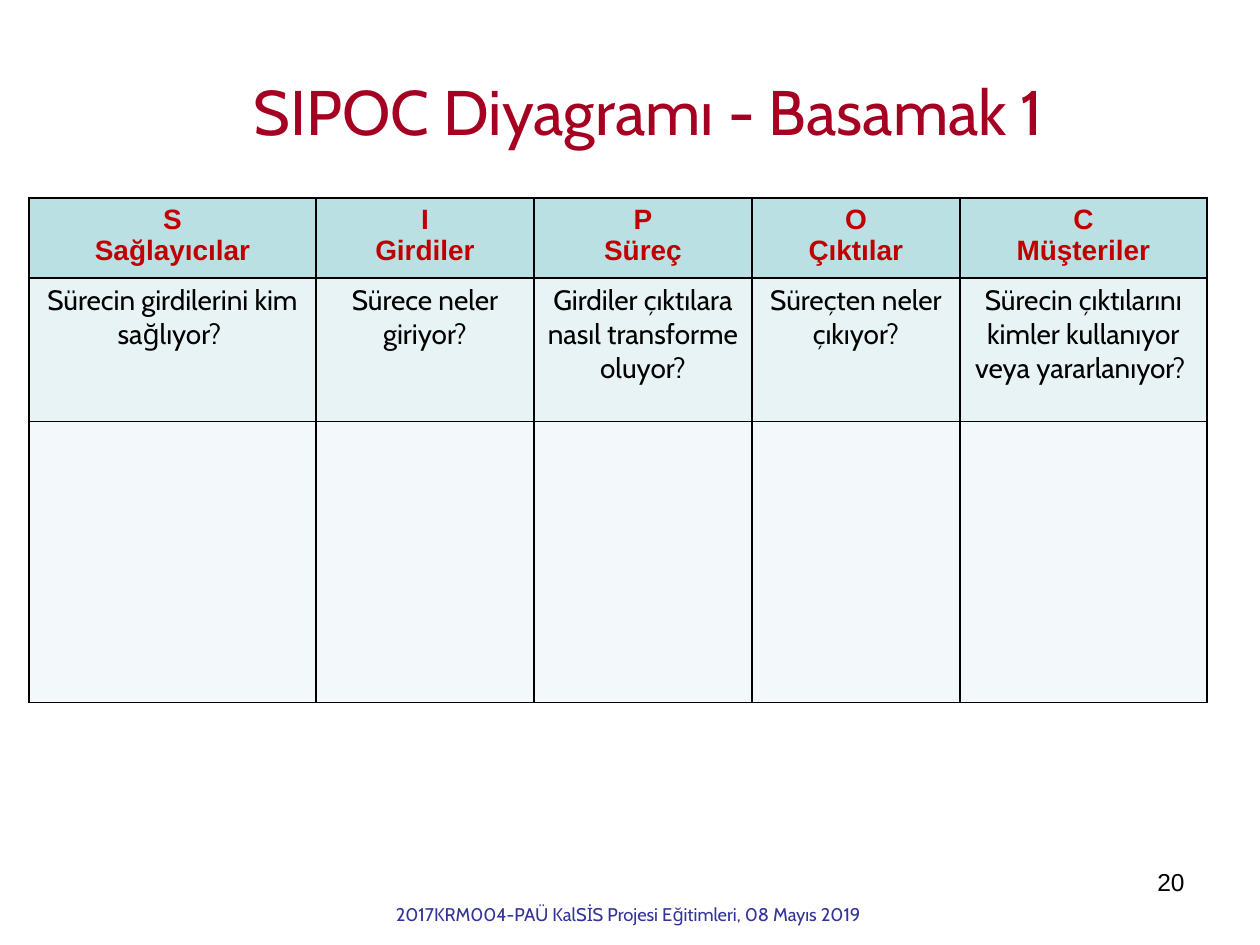
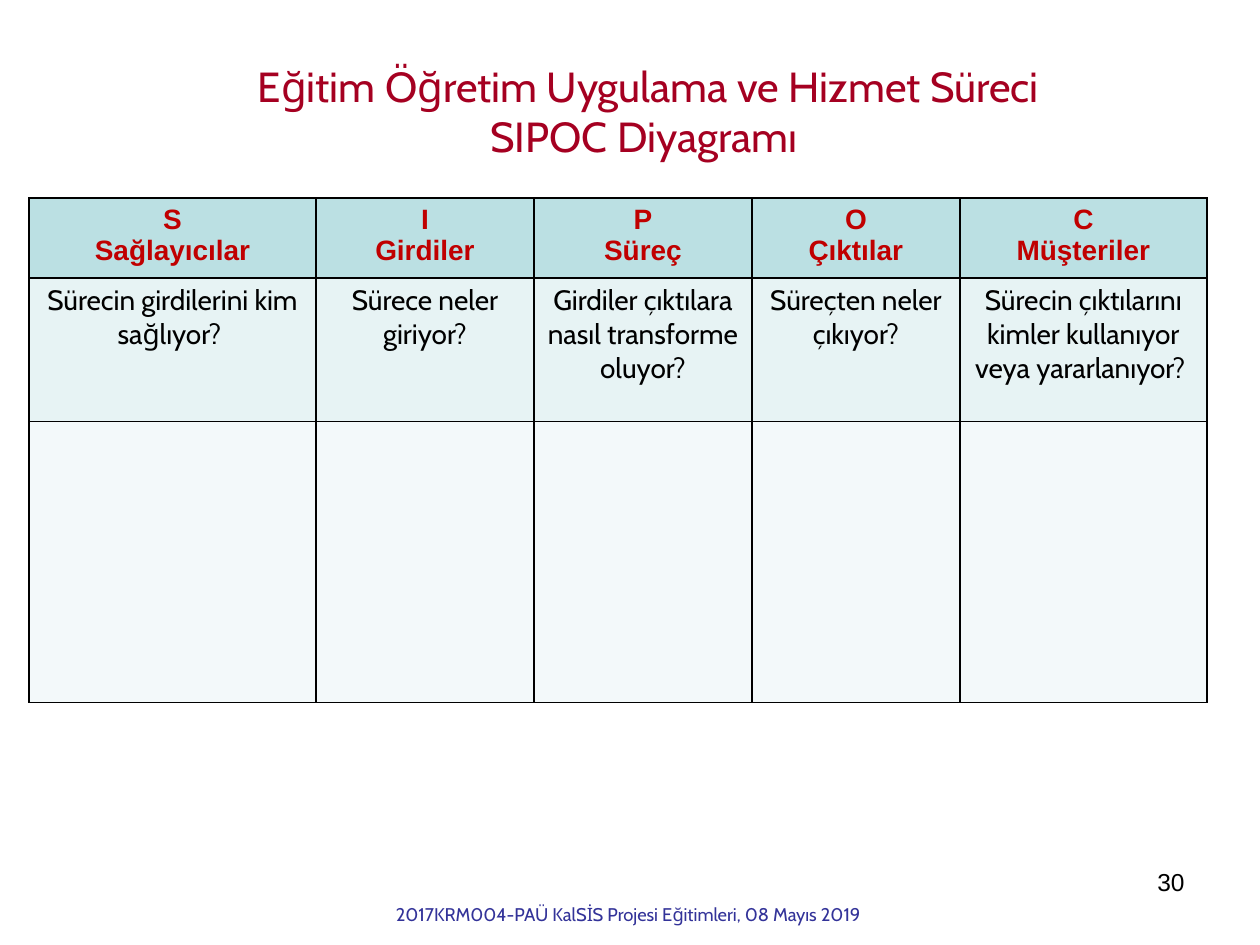
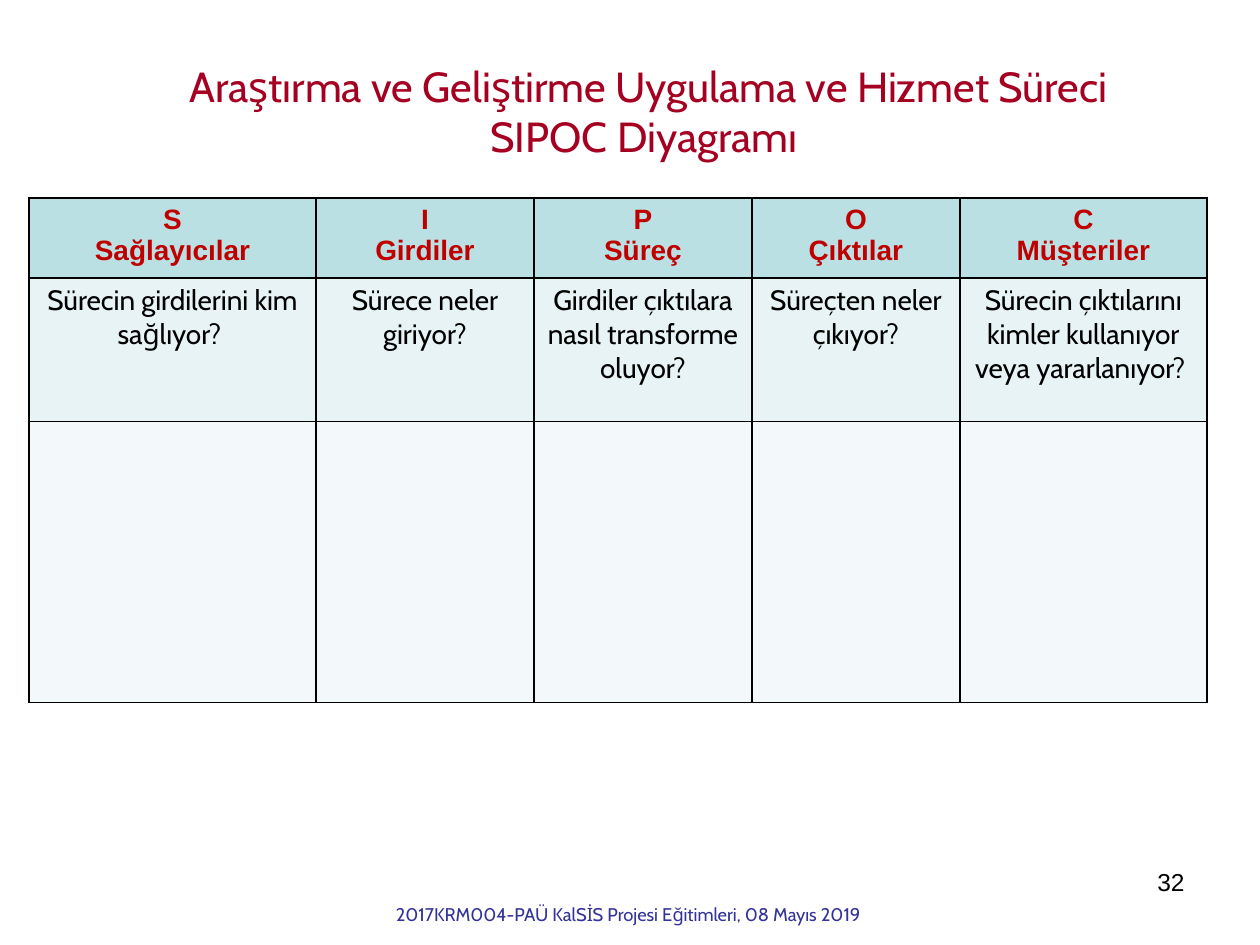
from lxml.etree import SubElement
from pptx import Presentation
from pptx.dml.color import RGBColor
from pptx.enum.text import MSO_ANCHOR as Anchor, MSO_AUTO_SIZE as AutoSize, PP_ALIGN as Align
from pptx.oxml.ns import qn
from pptx.util import Emu, Pt

PX = 914400 // 126
PAGE_SIZE = (1260, 945)
TITLE_ONLY = 5

CRIMSON = RGBColor(0xA5, 0x00, 0x21)
RED = RGBColor(0xC0, 0x00, 0x00)
BLACK = RGBColor(0x00, 0x00, 0x00)
NAVY = RGBColor(0x33, 0x33, 0x99)
AQUA = RGBColor(0xBB, 0xE0, 0xE3)
PALE_AQUA = RGBColor(0xE7, 0xF3, 0xF4)
MIST = RGBColor(0xF3, 0xF9, 0xFA)

TITLE_PLACE = (72, 66, 1153, 89)
NUMBER_PLACE = (903, 861, 294, 66)
FOOTER_PLACE = (362, 897, 537, 29)
TABLE_CORNER = (29, 198)
COLUMN_WIDTHS = (287, 218, 218, 208, 247)
ROW_HEIGHTS = (79, 144, 281)
ROW_FILLS = (AQUA, PALE_AQUA, MIST)
BORDER_WIDTH = Pt(1)

TITLE_FORMAT = {"name": "Cabin", "bold": False, "color": CRIMSON}
NUMBER_FORMAT = {"name": "Arial", "size": Pt(14), "color": BLACK}
FOOTER_FORMAT = {"name": "Cabin", "size": Pt(10.5), "color": NAVY}
HEADING_FORMAT = {"name": "Arial", "size": Pt(16), "bold": True, "color": RED}
QUESTION_FORMAT = {"name": "Cabin", "size": Pt(16), "bold": False, "color": BLACK}

FOOTER = "2017KRM004-PAÜ KalSİS Projesi Eğitimleri, 08 Mayıs 2019 "
SIPOC = (
    ("S", "Sağlayıcılar", "Sürecin girdilerini kim sağlıyor? "),
    ("I", "Girdiler", "Sürece neler giriyor?"),
    ("P", "Süreç", "Girdiler çıktılara nasıl transforme oluyor?"),
    ("O", "Çıktılar", "Süreçten neler çıkıyor?"),
    ("C", "Müşteriler", "Sürecin çıktılarını kimler kullanıyor veya yararlanıyor? "),
)
PAGES = (
    ("SIPOC Diyagramı - Basamak 1", 36, "20"),
    ("Eğitim Öğretim Uygulama ve Hizmet Süreci\vSIPOC Diyagramı ", 24, "30"),
    ("Araştırma ve Geliştirme Uygulama ve Hizmet Süreci\vSIPOC Diyagramı ", 24, "32"),
)


def scaled(lengths):
    return [Emu(length * PX) for length in lengths]


def write(frame, text, font_format, align=Align.CENTER):
    frame.text = text
    for para in frame.paragraphs:
        para.alignment = align
        for span in para.runs:
            for name, value in font_format.items():
                if name == "color":
                    span.font.color.rgb = value
                else:
                    setattr(span.font, name, value)


def add_title(page, text, size):
    title = page.shapes.title
    title.left, title.top, title.width, title.height = scaled(TITLE_PLACE)
    frame = title.text_frame
    write(frame, text, {**TITLE_FORMAT, "size": Pt(size)})
    settings = {"word_wrap": True, "auto_size": AutoSize.NONE, "vertical_anchor": Anchor.MIDDLE}
    for name, value in settings.items():
        setattr(frame, name, value)


def add_label(page, place, text, font_format, align):
    box = page.shapes.add_textbox(*scaled(place))
    box.text_frame.word_wrap = True
    write(box.text_frame, text, font_format, align)


def add_borders(cell):
    properties = cell._tc.get_or_add_tcPr()
    for side in ("a:lnL", "a:lnR", "a:lnT", "a:lnB"):
        line = SubElement(properties, qn(side), w=str(BORDER_WIDTH))
        fill = SubElement(line, qn("a:solidFill"))
        SubElement(fill, qn("a:srgbClr"), val=str(BLACK))


def add_sipoc_table(page):
    size = (sum(COLUMN_WIDTHS), sum(ROW_HEIGHTS))
    place = scaled(TABLE_CORNER + size)
    table = page.shapes.add_table(len(ROW_HEIGHTS), len(COLUMN_WIDTHS), *place).table
    table.first_row = table.horz_banding = False
    for row, height in zip(table.rows, scaled(ROW_HEIGHTS)):
        row.height = height
    for column, width in zip(table.columns, scaled(COLUMN_WIDTHS)):
        column.width = width
    for row, color in zip(table.rows, ROW_FILLS):
        for cell in row.cells:
            add_borders(cell)
            cell.fill.solid()
            cell.fill.fore_color.rgb = color
    for index, (letter, name, question) in enumerate(SIPOC):
        write(table.cell(0, index).text_frame, f"{letter}\n{name}", HEADING_FORMAT)
        write(table.cell(1, index).text_frame, question, QUESTION_FORMAT)


def add_page(deck, title, title_size, number):
    page = deck.slides.add_slide(deck.slide_layouts[TITLE_ONLY])
    add_label(page, NUMBER_PLACE, number, NUMBER_FORMAT, Align.RIGHT)
    add_title(page, title, title_size)
    add_label(page, FOOTER_PLACE, FOOTER, FOOTER_FORMAT, Align.CENTER)
    add_sipoc_table(page)


def main():
    deck = Presentation()
    deck.slide_width, deck.slide_height = scaled(PAGE_SIZE)
    for title, title_size, number in PAGES:
        add_page(deck, title, title_size, number)
    deck.save("out.pptx")


if __name__ == "__main__":
    main()
